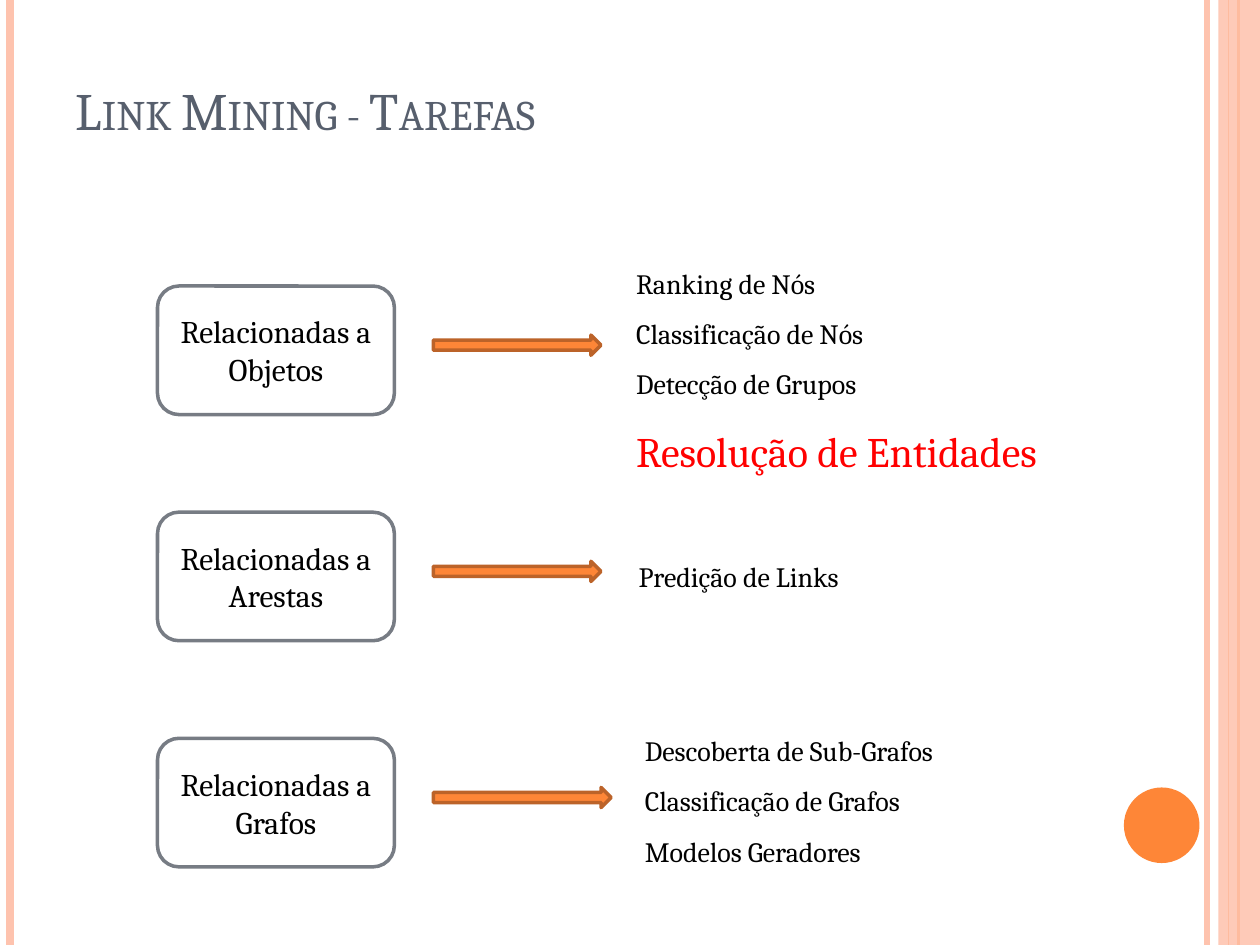
"""Build the slide on link mining tasks: three groups, each with an arrow to its list."""
from lxml import etree
from pptx import Presentation
from pptx.dml.color import RGBColor
from pptx.enum.shapes import MSO_CONNECTOR, MSO_SHAPE
from pptx.enum.text import MSO_ANCHOR, MSO_AUTO_SIZE, PP_ALIGN
from pptx.oxml.ns import qn
from pptx.util import Inches, Pt

LINE = MSO_CONNECTOR.STRAIGHT
RECT, OVAL = MSO_SHAPE.RECTANGLE, MSO_SHAPE.OVAL
ROUND, ARROW = MSO_SHAPE.ROUNDED_RECTANGLE, MSO_SHAPE.RIGHT_ARROW
LEFT, CENTER = PP_ALIGN.LEFT, PP_ALIGN.CENTER
MIDDLE, BOTTOM = MSO_ANCHOR.MIDDLE, MSO_ANCHOR.BOTTOM

PEACH = RGBColor(0xFE, 0xC3, 0xAE)
ORANGE = RGBColor(0xFE, 0x86, 0x37)
RUST = RGBColor(0xBC, 0x63, 0x29)
SLATE = RGBColor(0x57, 0x5F, 0x6D)
GRAY = RGBColor(0x77, 0x7C, 0x84)
WHITE = RGBColor(0xFF, 0xFF, 0xFF)
BLACK = RGBColor(0, 0, 0)
RED = RGBColor(0xFF, 0, 0)
FACE = "Cambria"

WIDE, HIGH = 10, 7.5
TOP, STEP = 2.27, 1.795
BOX_X, BOX_W, BOX_H = 1.25, 1.88, 1.02
ARROW_X, ARROW_H = 3.44, 0.16

RAILS = [(9.58, 3, PEACH), (0.08, 4.5, PEACH), (9.83, 1.5, ORANGE), (9.75, 0.75, ORANGE)]
GROUPS = [
    ("Relacionadas a Objetos", 1.33, (4.95, 1.93, 3.88, 1.92),
     ["Ranking de Nós", "Classificação de Nós", "Detecção de Grupos", "Resolução de Entidades"]),
    ("Relacionadas a Arestas", 1.33, (4.97, 4.26, 1.98, 0.5), ["Predição de Links"]),
    ("Relacionadas a Grafos", 1.41, (5.02, 5.64, 2.87, 1.31),
     ["Descoberta de Sub-Grafos", "Classificação de Grafos", "Modelos Geradores"]),
]
KEY = "Resolução de Entidades"


def draw(kind, spot, fill, edge=None):
    shape = slide.shapes.add_shape(kind, *map(Inches, spot))
    shape.shadow.inherit = False
    shape.fill.solid()
    shape.fill.fore_color.rgb = fill
    if edge is None:
        shape.line.fill.background()
    else:
        shape.line.color.rgb = edge
        shape.line.width = Pt(2)
    return shape


def style(para, size, color, align=LEFT):
    para.alignment = align
    para.font.name = FACE
    para.font.size = Pt(size)
    para.font.color.rgb = color


deck = Presentation()
deck.slide_width, deck.slide_height = Inches(WIDE), Inches(HIGH)
slide = deck.slides.add_slide(deck.slide_layouts[5])

for x, width, color in RAILS:
    rail = slide.shapes.add_connector(LINE, Inches(x), 0, Inches(x), Inches(HIGH))
    rail.line.color.rgb = color
    rail.line.width = Pt(width)
    etree.SubElement(rail._element.spPr, qn("a:effectLst"))

band = draw(RECT, (9.67, 0, 0.33, HIGH), PEACH)
tint = band._element.spPr.find(qn("a:solidFill"))[0]
etree.SubElement(tint, qn("a:alpha"), val="87000")
draw(OVAL, (8.92, 6.25, 0.6, 0.6), ORANGE)

title = slide.shapes.title
title.left, title.top, title.width, title.height = map(Inches, (0.5, -0.08, 8.17, 1.25))
frame = title.text_frame
frame.text = "Link Mining - Tarefas"
frame.auto_size = MSO_AUTO_SIZE.NONE
frame.vertical_anchor = BOTTOM
style(frame.paragraphs[0], 30, SLATE)
frame.paragraphs[0].runs[0]._r.get_or_add_rPr().set("cap", "small")

for row, (name, reach, spot, tasks) in enumerate(GROUPS):
    y = TOP + row * STEP
    box = draw(ROUND, (BOX_X, y, BOX_W, BOX_H), WHITE, GRAY)
    box.text_frame.text = name
    box.text_frame.word_wrap = True
    box.text_frame.vertical_anchor = MIDDLE
    style(box.text_frame.paragraphs[0], 18, BLACK, CENTER)

    draw(ARROW, (ARROW_X, y + 0.39, reach, ARROW_H), ORANGE, RUST)

    frame = slide.shapes.add_textbox(*map(Inches, spot)).text_frame
    frame.word_wrap = True
    frame.text = "\n".join(tasks)
    for para in frame.paragraphs:
        para.line_spacing = 1.5
        size, color = (24, RED) if para.text == KEY else (16, BLACK)
        style(para, size, color)

deck.save("out.pptx")
